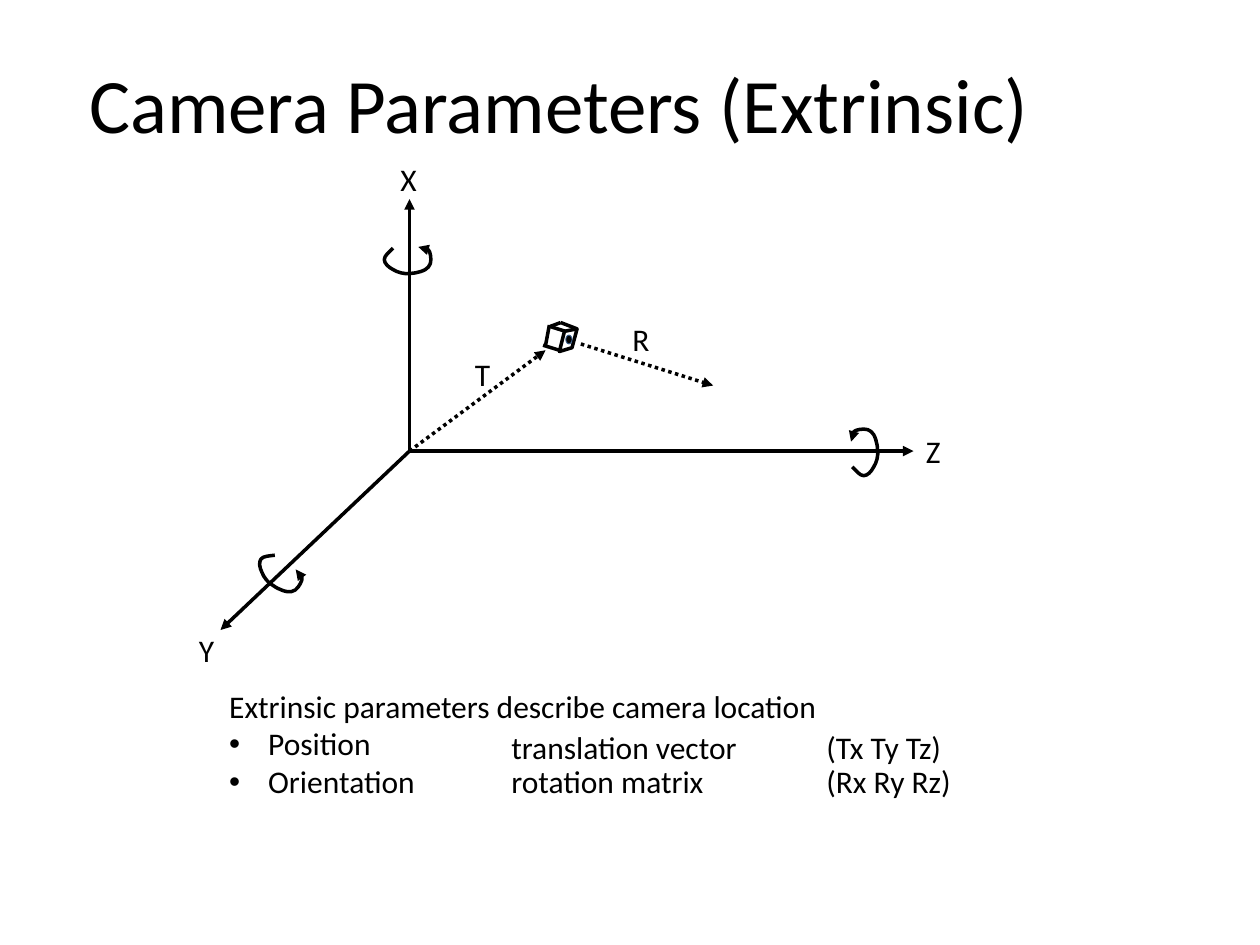
from typing import NamedTuple

from lxml.etree import SubElement as Sub
from pptx import Presentation
from pptx.dml.color import RGBColor as Rgb
from pptx.enum.dml import MSO_LINE as Dash
from pptx.enum.shapes import MSO_CONNECTOR as Conn, MSO_SHAPE as Kind
from pptx.oxml.ns import qn
from pptx.util import Inches, Pt

COLORS = {"ink": "000000", "paper": "FFFFFF", "lens": "3A5F8C"}
FONT = "Calibri"


class Label(NamedTuple):
    text: str
    x: float
    y: float
    w: float
    h: float = 0.4
    size: int = 18
    wrap: bool = False


class Ray(NamedTuple):
    start: tuple
    end: tuple
    dots: bool = False
    arrow: bool = True


class Spin(NamedTuple):
    x: float
    y: float
    turn: int


ORIGIN = (3.25, 3.58)
RAYS = [
    Ray(ORIGIN, (3.25, 1.58)),
    Ray(ORIGIN, (1.75, 5)),
    Ray(ORIGIN, (7.25, 3.58)),
    Ray(ORIGIN, (4.33, 2.78), dots=True),
    Ray((4.61, 2.73), (5.66, 3.06), dots=True),
]
EDGES = [
    Ray((4.45, 2.56), (4.37, 2.59), arrow=False),
    Ray((4.44, 2.78), (4.31, 2.74), arrow=False),
    Ray((4.36, 2.58), (4.33, 2.74), arrow=False),
    Ray((4.49, 2.63), (4.36, 2.59), arrow=False),
    Ray((4.58, 2.61), (4.45, 2.56), arrow=False),
]
FACE = [(4.58, 2.61), (4.54, 2.76), (4.44, 2.79), (4.48, 2.63)]
LOOP = [
    (0.07, 0.01),
    (0.04, 0.04), (0, 0.07), (0, 0.1),
    (0, 0.13), (0.03, 0.16), (0.07, 0.18),
    (0.1, 0.2), (0.16, 0.22), (0.21, 0.21),
    (0.25, 0.21), (0.33, 0.19), (0.35, 0.16),
    (0.38, 0.13), (0.37, 0.07), (0.36, 0.04),
    (0.35, 0.02), (0.32, -0.01), (0.27, 0),
]
SPINS = [Spin(3.05, 1.96, 0), Spin(6.67, 3.48, 270), Spin(2.03, 4.45, 37)]
LABELS = [
    Label("Camera Parameters (Extrinsic)", 0.61, 0.4, 7.74, 0.84, 44),
    Label("X", 3.08, 1.22, 0.33),
    Label("Y", 1.48, 4.96, 0.33),
    Label("Z", 7.25, 3.38, 0.32),
    Label("T", 3.67, 2.77, 0.33),
    Label("R", 4.92, 2.49, 0.34),
    Label("translation vector\t\t(Tx Ty Tz)", 3.96, 5.73, 4.81, wrap=True),
    Label("rotation matrix\t\t(Rx Ry Rz)", 3.96, 6, 4.95, wrap=True),
]
NOTE = Label("Extrinsic parameters describe camera location\nPosition\nOrientation",
             1.72, 5.4, 6.75, 1.01, wrap=True)


def color(name: str) -> Rgb:
    return Rgb.from_string(COLORS[name])


def stroke(item, name: str = "ink", width: float = 2) -> None:
    item.line.color.rgb = color(name)
    item.line.width = Pt(width)


def point(item) -> None:
    line = item._element.spPr.find(qn("a:ln"))
    Sub(line, qn("a:tailEnd"), type="triangle")


def write(shapes, label: Label):
    box = shapes.add_textbox(*map(Inches, label[1:5]))
    frame = box.text_frame
    frame.word_wrap = label.wrap
    frame.text = label.text
    for para in frame.paragraphs:
        para.font.name = FONT
        para.font.size = Pt(label.size)
        para.font.color.rgb = color("ink")
    return frame


def bullet(para) -> None:
    props = para._p.get_or_add_pPr()
    props.set("marL", str(Inches(0.31)))
    props.set("indent", str(Inches(-0.31)))
    mark = Sub(props, qn("a:buFont"), typeface="Arial")
    mark.addnext(Sub(props, qn("a:buChar"), char="•"))
    props.append(props.find(qn("a:defRPr")))


def draw(shapes, ray: Ray) -> None:
    line = shapes.add_connector(Conn.STRAIGHT, *map(Inches, ray.start + ray.end))
    stroke(line)
    if ray.dots:
        line.line.dash_style = Dash.ROUND_DOT
    if ray.arrow:
        point(line)
    Sub(line._element.spPr, qn("a:effectLst"))


def outline(shapes, points: list, close: bool):
    dots = [(Inches(x), Inches(y)) for x, y in points]
    form = shapes.build_freeform(*dots[0])
    form.add_line_segments(dots[1:], close=close)
    shape = form.convert_to_shape()
    shape.shadow.inherit = False
    stroke(shape)
    return shape


def curve(shape) -> None:
    steps = list(shape._element.iter(qn("a:lnTo")))
    for first, *rest in zip(steps[::3], steps[1::3], steps[2::3]):
        first.tag = qn("a:cubicBezTo")
        for step in rest:
            first.append(step[0])
            step.getparent().remove(step)


def spin(shapes, mark: Spin) -> None:
    shape = outline(shapes, [(mark.x + x, mark.y + y) for x, y in LOOP], False)
    curve(shape)
    shape.fill.background()
    shape.rotation = mark.turn
    point(shape)


def camera(shapes) -> None:
    parts = shapes.add_group_shape().shapes
    face = outline(parts, FACE, True)
    face.fill.solid()
    face.fill.fore_color.rgb = color("paper")
    for edge in EDGES:
        draw(parts, edge)
    lens = parts.add_shape(Kind.OVAL, *map(Inches, (4.49, 2.66, 0.05, 0.07)))
    lens.shadow.inherit = False
    lens.fill.solid()
    lens.fill.fore_color.rgb = color("ink")
    stroke(lens, "lens", 0.5)


def main() -> None:
    deck = Presentation()
    deck.slide_width, deck.slide_height = Inches(10), Inches(7.5)
    shapes = deck.slides.add_slide(deck.slide_layouts[6]).shapes
    for ray in RAYS:
        draw(shapes, ray)
    camera(shapes)
    for mark in SPINS:
        spin(shapes, mark)
    for label in LABELS:
        write(shapes, label)
    for para in write(shapes, NOTE).paragraphs[1:]:
        bullet(para)
    deck.save("out.pptx")


if __name__ == "__main__":
    main()
